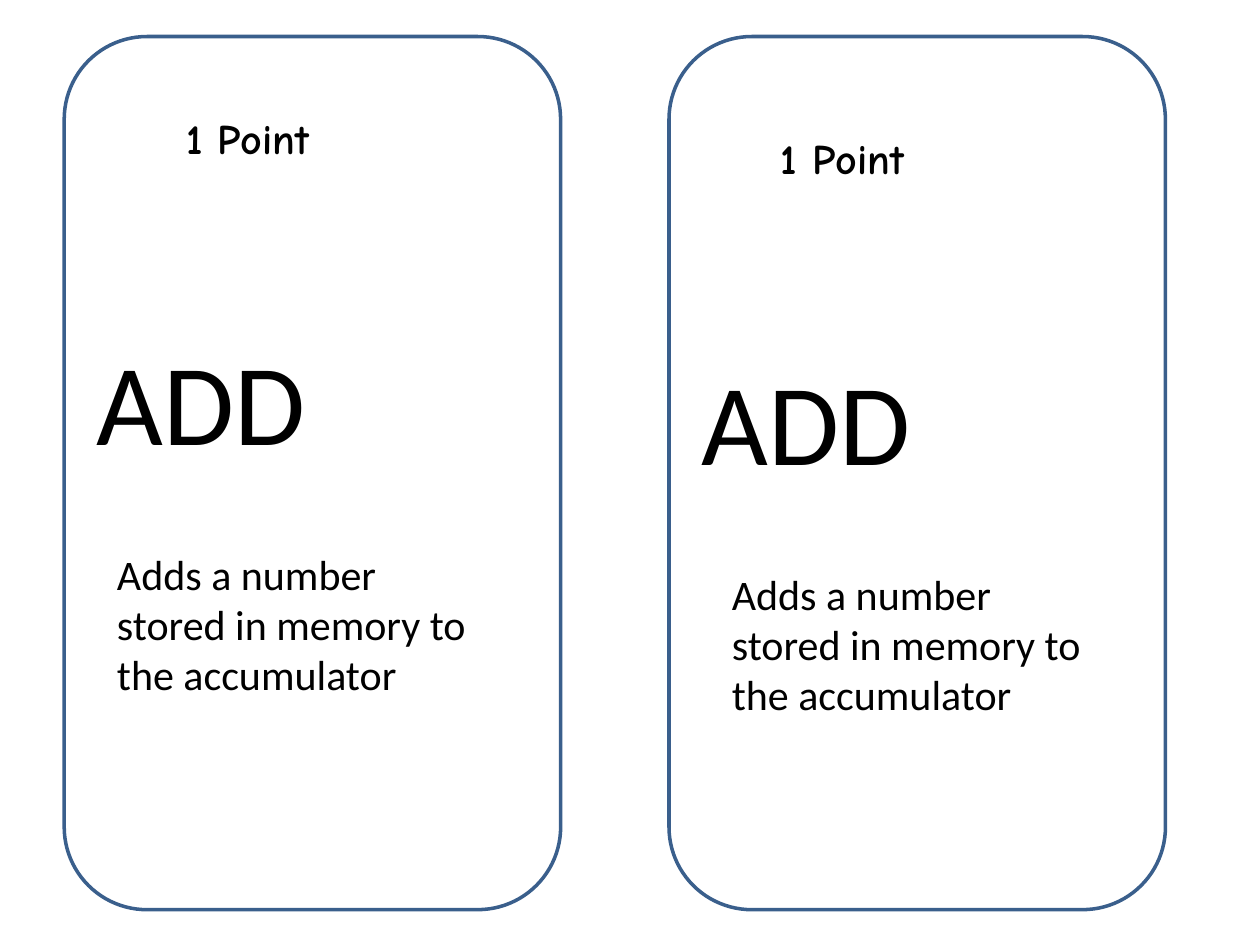
from dataclasses import dataclass

from pptx import Presentation
from pptx.dml.color import RGBColor
from pptx.enum.shapes import MSO_SHAPE
from pptx.enum.text import MSO_AUTO_SIZE
from pptx.slide import Slide
from pptx.util import Inches, Pt

BLACK = RGBColor(0x00, 0x00, 0x00)
BORDER_BLUE = RGBColor(0x3A, 0x5F, 0x8C)

SLIDE_W, SLIDE_H = 10, 7.5
CARD_LEFT, CARD_TOP = 0.51, 0.29
CARD_W, CARD_H = 3.94, 6.93
CARD_PITCH = 0.48 * SLIDE_W
TEXT_DROP = 0.16  # the right card's text sits a little lower


@dataclass(frozen=True)
class Label:
    """A text block, placed by its offset from each card's left edge."""
    text: str
    offsets: tuple[float, float]
    top: float
    width: float
    height: float
    size: int
    font: str = "Calibri"
    bold: bool = False


LABELS = (
    Label("ADD", (0.16, 0.16), 2.57, 3.54, 1.21, 66),
    Label("Adds a number stored in memory to the accumulator",
          (0.32, 0.4), 4.3, 3.15, 1.31, 24),
    Label("1 Point", (0.87, 0.79), 0.84, 2.36, 0.5, 24, "Comic Neue", True),
)


def card_left(column: int) -> float:
    return CARD_LEFT + column * CARD_PITCH


def draw_card(s: Slide, column: int) -> None:
    sp = s.shapes.add_shape(
        MSO_SHAPE.ROUNDED_RECTANGLE, Inches(card_left(column)),
        Inches(CARD_TOP), Inches(CARD_W), Inches(CARD_H))
    sp.shadow.inherit = False
    sp.fill.background()
    sp.line.color.rgb = BORDER_BLUE
    sp.line.width = Pt(2)


def draw_label(s: Slide, label: Label, column: int) -> None:
    sp = s.shapes.add_textbox(
        Inches(card_left(column) + label.offsets[column]),
        Inches(label.top + column * TEXT_DROP),
        Inches(label.width), Inches(label.height))
    tf = sp.text_frame
    tf.word_wrap = True
    tf.auto_size = MSO_AUTO_SIZE.SHAPE_TO_FIT_TEXT
    tf.text = label.text
    font = tf.paragraphs[0].runs[0].font
    font.name = label.font
    font.size = Pt(label.size)
    font.bold = label.bold
    font.color.rgb = BLACK


def main() -> None:
    prs = Presentation()
    prs.slide_width, prs.slide_height = Inches(SLIDE_W), Inches(SLIDE_H)
    s = prs.slides.add_slide(prs.slide_layouts[6])
    for column in range(2):
        draw_card(s, column)
    for label in LABELS:
        for column in range(2):
            draw_label(s, label, column)
    prs.save("out.pptx")


if __name__ == "__main__":
    main()
